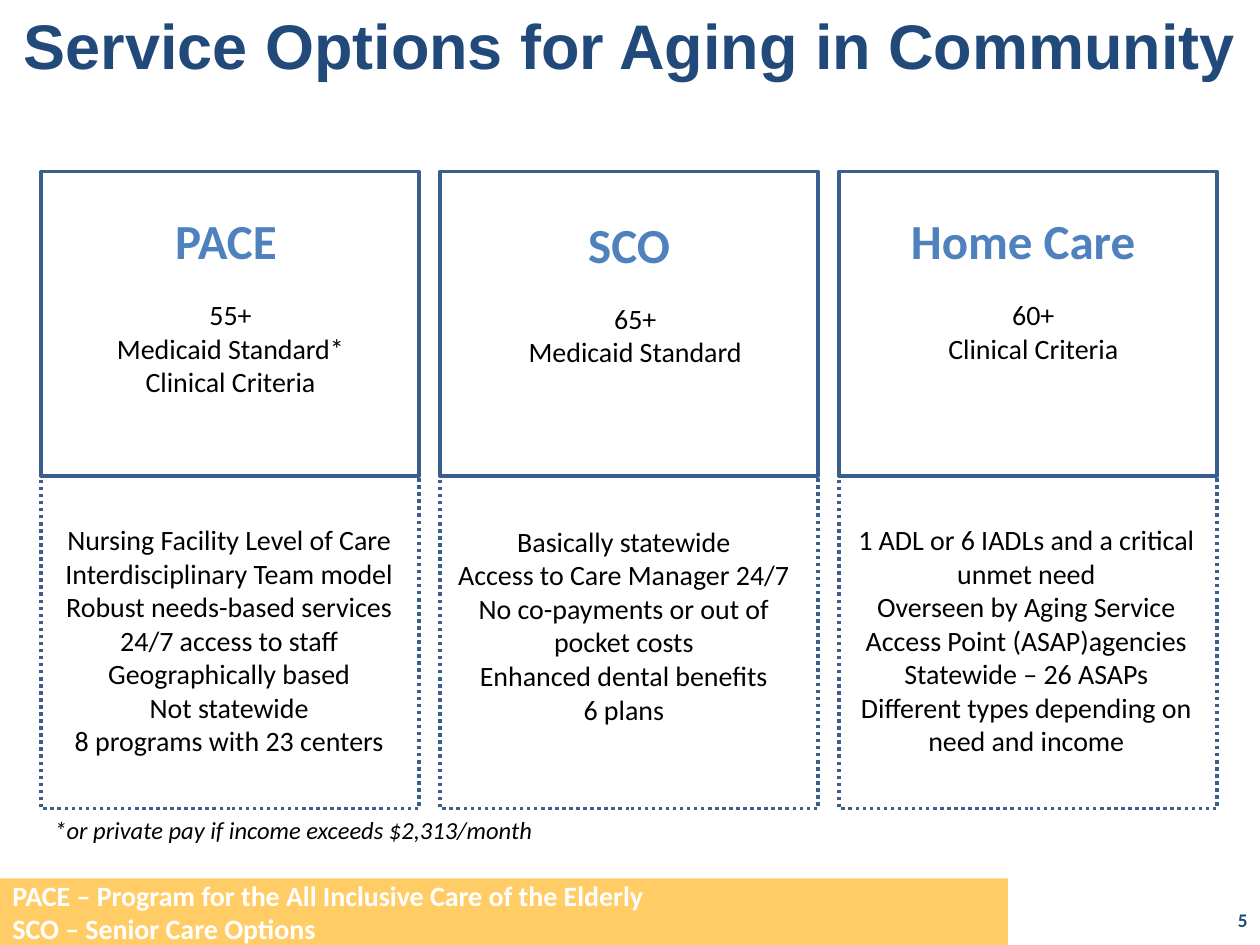
import pptx
import pptx.util
import pptx.dml.color
import pptx.enum.dml
import pptx.enum.shapes
import pptx.enum.text

Pt = pptx.util.Pt
ALIGN = pptx.enum.text.PP_ALIGN
ANCHOR = pptx.enum.text.MSO_ANCHOR
DASH = pptx.enum.dml.MSO_LINE

COLORS = {
    "title": "214A7B", "heading": "4F81BD", "body": "000000", "frame": "3A5F8C",
    "bar": "FFCC66", "bar_text": "FFFFFF", "number": "1F497D",
}

STYLES = {
    "title": {"size": Pt(36), "name": "Arial", "bold": True},
    "heading": {"size": Pt(28), "name": "Calibri", "bold": True},
    "body": {"size": Pt(16), "name": "Calibri"},
    "note": {"size": Pt(14), "name": "Calibri", "italic": True},
    "bar_text": {"size": Pt(16), "name": "Calibri", "bold": True},
    "number": {"size": Pt(11), "name": "Calibri", "bold": True},
}

# Columns: frame left edges follow a constant pitch
FIRST_LEFT, PITCH, FRAME_WIDTH = 23.5, 228, 216
FRAME_TOP, FRAME_MIDDLE, FRAME_BOTTOM = 98, 272, 462

# Each text is (left, top, width, height) and its lines
OPTIONS = [
    {
        "heading": ((93, 116.5, 73.5, 41), ["PACE"]),
        "criteria": ((47.5, 166.5, 168.5, 65.5),
                     ["55+", "Medicaid Standard*", "Clinical Criteria"]),
        "details": ((26, 295, 210, 143),
                    ["Nursing Facility Level of Care", "Interdisciplinary Team model",
                     "Robust needs-based services", "24/7 access to staff",
                     "Geographically based", "Not statewide",
                     "8 programs with 23 centers"]),
    },
    {
        "heading": ((329, 119, 62, 41), ["SCO"]),
        "criteria": ((282, 168.5, 162, 46), ["65+", "Medicaid Standard"]),
        "details": ((251.5, 296, 210, 124),
                    ["Basically statewide", "Access to Care Manager 24/7",
                     "No co-payments or out of pocket costs",
                     "Enhanced dental benefits", "6 plans"]),
    },
    {
        "heading": ((513.5, 116.5, 144, 41), ["Home Care"]),
        "criteria": ((485.5, 166.5, 210, 46), ["60+", "Clinical Criteria"]),
        "details": ((481.5, 295, 210, 143),
                    ["1 ADL or 6 IADLs and a critical unmet need",
                     "Overseen by Aging Service Access Point (ASAP)agencies",
                     "Statewide – 26 ASAPs",
                     "Different types depending on need and income"]),
    },
]


def rgb(name):
    return pptx.dml.color.RGBColor.from_string(COLORS[name])


def write_lines(shape, lines, style, color, align=ALIGN.LEFT,
                anchor=ANCHOR.TOP, wrap=True):
    frame = shape.text_frame
    frame.word_wrap = wrap
    frame.vertical_anchor = anchor
    for index, line in enumerate(lines):
        para = frame.add_paragraph() if index else frame.paragraphs[0]
        para.alignment = align
        span = para.add_run()
        span.text = line
        span.font.color.rgb = rgb(color)
        for key, value in STYLES[style].items():
            setattr(span.font, key, value)


def add_text(page, place, lines, style, color, **layout):
    box = page.shapes.add_textbox(*map(Pt, place))
    write_lines(box, lines, style, color, **layout)


def add_rectangle(page, place, fill=None, dash=None):
    """Filled without outline, or outlined without fill."""
    kind = pptx.enum.shapes.MSO_SHAPE.RECTANGLE
    shape = page.shapes.add_shape(kind, *map(Pt, place))
    shape.shadow.inherit = False
    if fill:
        shape.fill.solid()
        shape.fill.fore_color.rgb = rgb(fill)
        shape.line.fill.background()
    else:
        shape.fill.background()
        shape.line.color.rgb = rgb("frame")
        shape.line.width = Pt(2)
        shape.line.dash_style = dash
    return shape


def add_option(page, left, option):
    add_text(page, *option["heading"], "heading", "heading", wrap=False)
    for part in ("criteria", "details"):
        add_text(page, *option[part], "body", "body", align=ALIGN.CENTER)
    add_rectangle(page, (left, FRAME_TOP, FRAME_WIDTH, FRAME_MIDDLE - FRAME_TOP),
                  dash=DASH.SOLID)
    add_rectangle(page, (left, FRAME_MIDDLE, FRAME_WIDTH, FRAME_BOTTOM - FRAME_MIDDLE),
                  dash=DASH.ROUND_DOT)


def main():
    deck = pptx.Presentation()
    deck.slide_width, deck.slide_height = Pt(720), Pt(540)
    page = deck.slides.add_slide(deck.slide_layouts[6])

    # Footer bar with the abbreviations, and page number
    bar = add_rectangle(page, (0, 502, 576, 38), fill="bar")
    write_lines(bar, ["PACE – Program for the All Inclusive Care of the Elderly",
                      "SCO – Senior Care Options"],
                "bar_text", "bar_text", anchor=ANCHOR.MIDDLE)
    add_text(page, (552, 511, 168, 29), ["5"], "number", "number",
             align=ALIGN.RIGHT, anchor=ANCHOR.MIDDLE)

    # Title
    add_text(page, (0, 0, 720, 51), ["Service Options for Aging in Community"],
             "title", "title", align=ALIGN.CENTER)

    # Service options
    for index, option in enumerate(OPTIONS):
        add_option(page, FIRST_LEFT + index * PITCH, option)

    # Footnote
    add_text(page, (24, 462, 367, 24.5),
             ["*or private pay if income exceeds $2,313/month"], "note", "body")

    deck.save("out.pptx")


if __name__ == "__main__":
    main()
